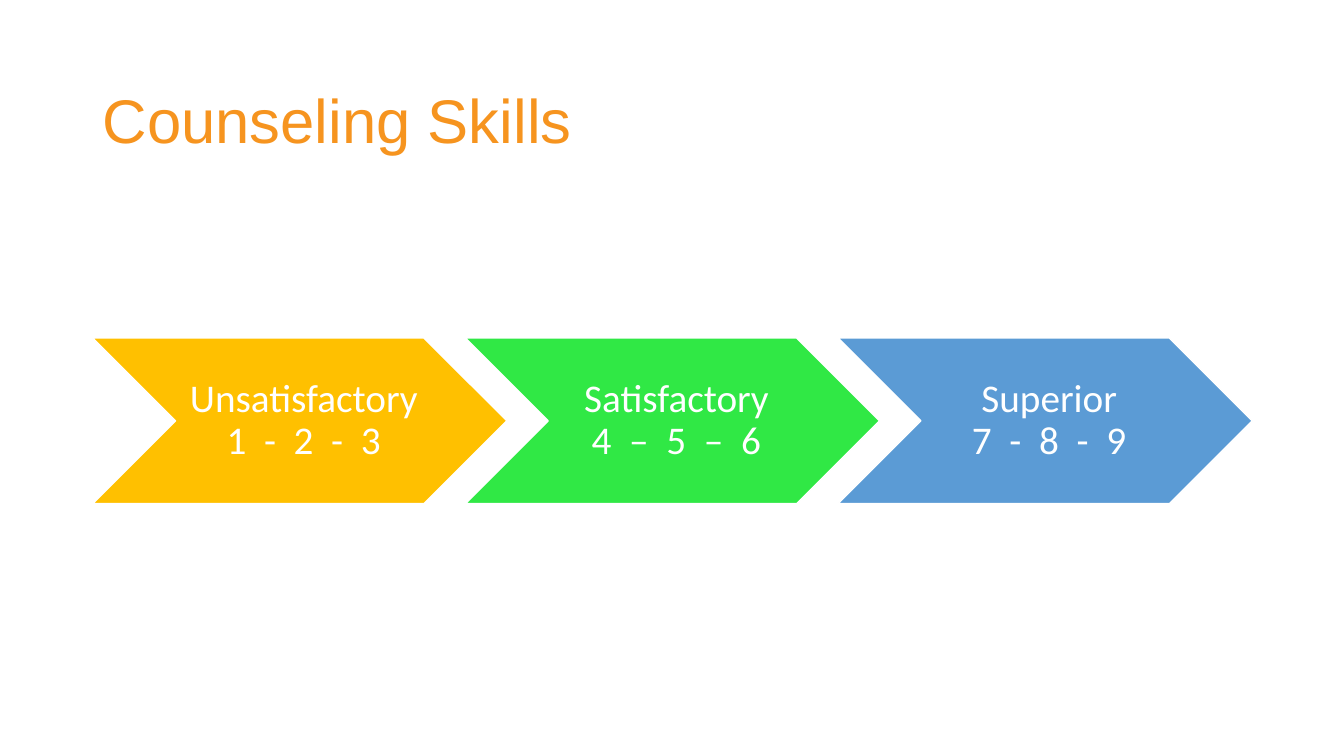
from dataclasses import dataclass

from pptx import Presentation
from pptx.dml.color import RGBColor as Rgb
from pptx.enum.shapes import MSO_SHAPE as Shape
from pptx.enum.text import MSO_ANCHOR as Anchor, PP_ALIGN as Align
from pptx.util import Inches, Pt


@dataclass(frozen=True)
class Theme:
    """Colours, fonts and type sizes of the slide."""
    title_font: str = "Arial"
    title_size: int = 44
    title_color: str = "F6941F"
    step_font: str = "Calibri"
    step_size: int = 28
    white: str = "FFFFFF"
    line_spacing: float = 0.9
    score_tracking: int = 317


@dataclass(frozen=True)
class Box:
    """A region of the slide in inches."""
    left: float
    top: float
    width: float
    height: float

    def lengths(self):
        """Return the four lengths for a new shape."""
        return [Inches(n) for n in (self.left, self.top, self.width, self.height)]


THEME = Theme()
PAGE_WIDTH, PAGE_HEIGHT = 13.33, 7.5
TITLE_BOX = Box(0.92, 0.5, 11.5, 1.45)
SCALE_BOX = Box(0.92, 2.0, 11.5, 4.35)
PITCH_SHARE = 0.9
HEIGHT_SHARE = 0.4
RATINGS = [
    ("Unsatisfactory", "1 - 2 - 3", "FFC000"),
    ("Satisfactory", "4 – 5 – 6", "30E845"),
    ("Superior", "7 - 8 - 9", "5B9BD5"),
]


def style_span(span, font, size, color):
    """Set the font, size and colour of a run."""
    span.font.name = font
    span.font.size = Pt(size)
    span.font.color.rgb = Rgb.from_string(color)


def add_title(page, box, text):
    """Place the slide title, centred vertically in its box."""
    frame = page.shapes.add_textbox(*box.lengths()).text_frame
    frame.word_wrap = True
    frame.vertical_anchor = Anchor.MIDDLE
    frame.text = text
    para = frame.paragraphs[0]
    para.line_spacing = THEME.line_spacing
    style_span(para.runs[0], THEME.title_font, THEME.title_size, THEME.title_color)


def add_rating(page, box, label, scores, color):
    """Draw one chevron with a rating and its tracked-out scores."""
    chevron = page.shapes.add_shape(Shape.CHEVRON, *box.lengths())
    chevron.shadow.inherit = False
    chevron.fill.solid()
    chevron.fill.fore_color.rgb = Rgb.from_string(color)
    chevron.line.color.rgb = Rgb.from_string(THEME.white)
    chevron.line.width = Pt(1)
    frame = chevron.text_frame
    frame.word_wrap = True
    frame.vertical_anchor = Anchor.MIDDLE
    frame.margin_left = Inches(0.12)
    frame.margin_right = frame.margin_top = frame.margin_bottom = Inches(0.04)
    frame.text = f"{label}\v{scores}"
    para = frame.paragraphs[0]
    para.alignment = Align.CENTER
    para.line_spacing = THEME.line_spacing
    for span in para.runs:
        style_span(span, THEME.step_font, THEME.step_size, THEME.white)
    para.runs[-1].font._element.set("spc", str(THEME.score_tracking))


def add_scale(page, box, ratings):
    """Spread overlapping chevrons across the box, centred vertically."""
    width = box.width / (1 + PITCH_SHARE * (len(ratings) - 1))
    height = width * HEIGHT_SHARE
    top = box.top + (box.height - height) / 2
    for column, rating in enumerate(ratings):
        left = box.left + column * width * PITCH_SHARE
        add_rating(page, Box(left, top, width, height), *rating)


def main():
    """Build the slide and save the deck."""
    deck = Presentation()
    deck.slide_width, deck.slide_height = Inches(PAGE_WIDTH), Inches(PAGE_HEIGHT)
    page = deck.slides.add_slide(deck.slide_layouts[6])
    add_title(page, TITLE_BOX, "Counseling Skills")
    add_scale(page, SCALE_BOX, RATINGS)
    deck.save("out.pptx")


if __name__ == "__main__":
    main()
